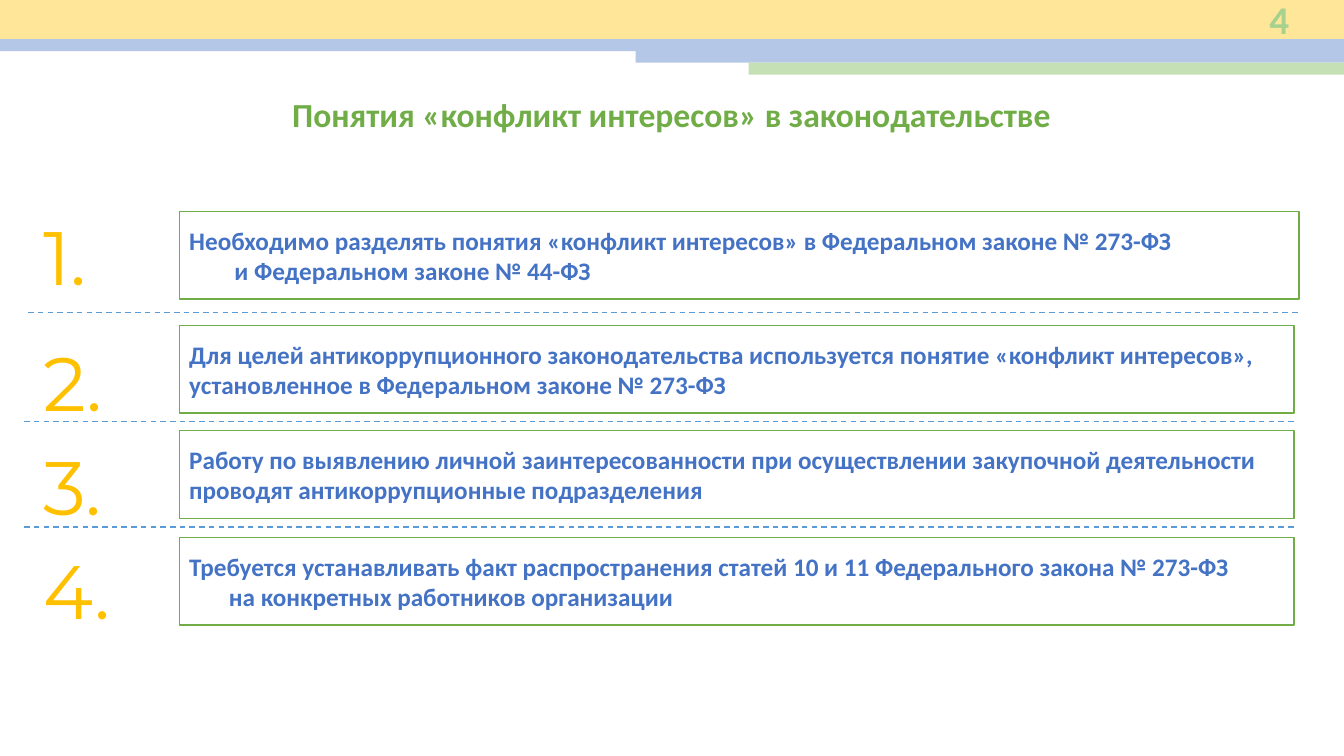
import pptx
import pptx.util
from dataclasses import dataclass
from lxml import etree
from pptx.dml.color import RGBColor
from pptx.enum.dml import MSO_LINE
from pptx.enum.shapes import MSO_CONNECTOR, MSO_SHAPE
from pptx.enum.text import MSO_ANCHOR, PP_ALIGN
from pptx.oxml.ns import qn
from pptx.util import Cm


@dataclass(frozen=True)
class Theme:
    yellow: str = "FFE699"
    blue: str = "B4C7E7"
    pale_green: str = "C5E0B4"
    page_green: str = "A9D18E"
    green: str = "70AD47"
    text_blue: str = "4472C4"
    dash_blue: str = "5B9BD5"
    gold: str = "FFC000"
    body_font: str = "Calibri"
    number_font: str = "Montserrat"
    page_size: int = 28
    title_size: int = 24
    body_size: int = 18
    number_size: int = 54
    line_width: int = 1


T = Theme()

# Bands: left, top, width, height, colour
BANDS = [
    (0, 0, 33.87, 0.99, T.yellow),
    (0, 0.99, 33.87, 0.3, T.blue),
    (16.02, 1.28, 17.85, 0.3, T.blue),
    (18.87, 1.58, 15, 0.3, T.pale_green),
]

# Points: box top, box width, number top, second-line indent, text
POINTS = [
    (5.33, 28.22, 5.16, 1.14,
     "Необходимо разделять понятия «конфликт интересов» в Федеральном законе № 273-ФЗ\v"
     "и Федеральном законе № 44-ФЗ"),
    (8.2, 28.09, 8.33, 0,
     "Для целей антикоррупционного законодательства используется понятие "
     "«конфликт интересов», установленное в Федеральном законе № 273-ФЗ"),
    (10.85, 28.09, 10.97, 0,
     "Работу по выявлению личной заинтересованности при осуществлении закупочной "
     "деятельности проводят антикоррупционные подразделения"),
    (13.54, 28.09, 13.59, 1,
     "Требуется устанавливать факт распространения статей 10 и 11 Федерального закона № 273-ФЗ\v"
     "на конкретных работников организации"),
]

# Dividers: left, top
DIVIDERS = [(0.71, 7.87), (0.61, 10.62), (0.61, 13.28)]


def set_text(sp, text, size, color, font=T.body_font, bold=True,
             align=PP_ALIGN.LEFT, anchor=MSO_ANCHOR.TOP, hanging=0):
    tf = sp.text_frame
    tf.word_wrap = True
    tf.vertical_anchor = anchor
    p = tf.paragraphs[0]
    p.text = text
    p.alignment = align
    if hanging:
        pPr = p._p.get_or_add_pPr()
        pPr.set("marL", str(Cm(hanging)))
        pPr.set("indent", str(-Cm(hanging)))
    style = {"size": pptx.util.Pt(size), "name": font, "bold": bold}
    for r in p.runs:
        for name, value in style.items():
            setattr(r.font, name, value)
        r.font.color.rgb = RGBColor.from_string(color)


def add_label(s, left, top, width, height, text, size, color, **options):
    sp = s.shapes.add_textbox(Cm(left), Cm(top), Cm(width), Cm(height))
    set_text(sp, text, size, color, **options)


def add_rect(s, left, top, width, height):
    sp = s.shapes.add_shape(MSO_SHAPE.RECTANGLE, Cm(left), Cm(top), Cm(width), Cm(height))
    sp.shadow.inherit = False
    return sp


def add_band(s, left, top, width, height, color):
    sp = add_rect(s, left, top, width, height)
    sp.fill.solid()
    sp.fill.fore_color.rgb = RGBColor.from_string(color)
    sp.line.fill.background()


def set_line(line, color, dash=None):
    line.color.rgb = RGBColor.from_string(color)
    for name, value in {"width": pptx.util.Pt(T.line_width), "dash_style": dash}.items():
        setattr(line, name, value)


def add_point(s, number, top, width, number_top, hanging, text):
    sp = add_rect(s, 4.52, top, width, 2.21)
    sp.fill.background()
    set_line(sp.line, T.green)
    set_text(sp, text, T.body_size, T.text_blue, anchor=MSO_ANCHOR.MIDDLE, hanging=hanging)
    add_label(s, 0.84, number_top, 3.18, 2.57, f"{number}.", T.number_size, T.gold,
              font=T.number_font, bold=False)


def add_divider(s, left, top):
    cx = s.shapes.add_connector(MSO_CONNECTOR.STRAIGHT, Cm(left), Cm(top),
                                Cm(left + 32.03), Cm(top))
    set_line(cx.line, T.dash_blue, MSO_LINE.DASH)
    etree.SubElement(cx._element.spPr, qn("a:effectLst"))


def main():
    prs = pptx.Presentation()
    prs.slide_width, prs.slide_height = Cm(33.87), Cm(19.05)
    s = prs.slides.add_slide(prs.slide_layouts[6])

    # Header bands, page number and title
    for band in BANDS:
        add_band(s, *band)
    add_label(s, 31.24, 0, 1.5, 0.97, "4", T.page_size, T.page_green,
              align=PP_ALIGN.RIGHT, anchor=MSO_ANCHOR.MIDDLE)
    add_label(s, 1.52, 2.24, 30.81, 1.27, "Понятия «конфликт интересов» в законодательстве",
              T.title_size, T.green, align=PP_ALIGN.CENTER)

    # Numbered points and the dashed lines between them
    for number, point in enumerate(POINTS, 1):
        add_point(s, number, *point)
    for divider in DIVIDERS:
        add_divider(s, *divider)

    prs.save("out.pptx")


if __name__ == "__main__":
    main()
